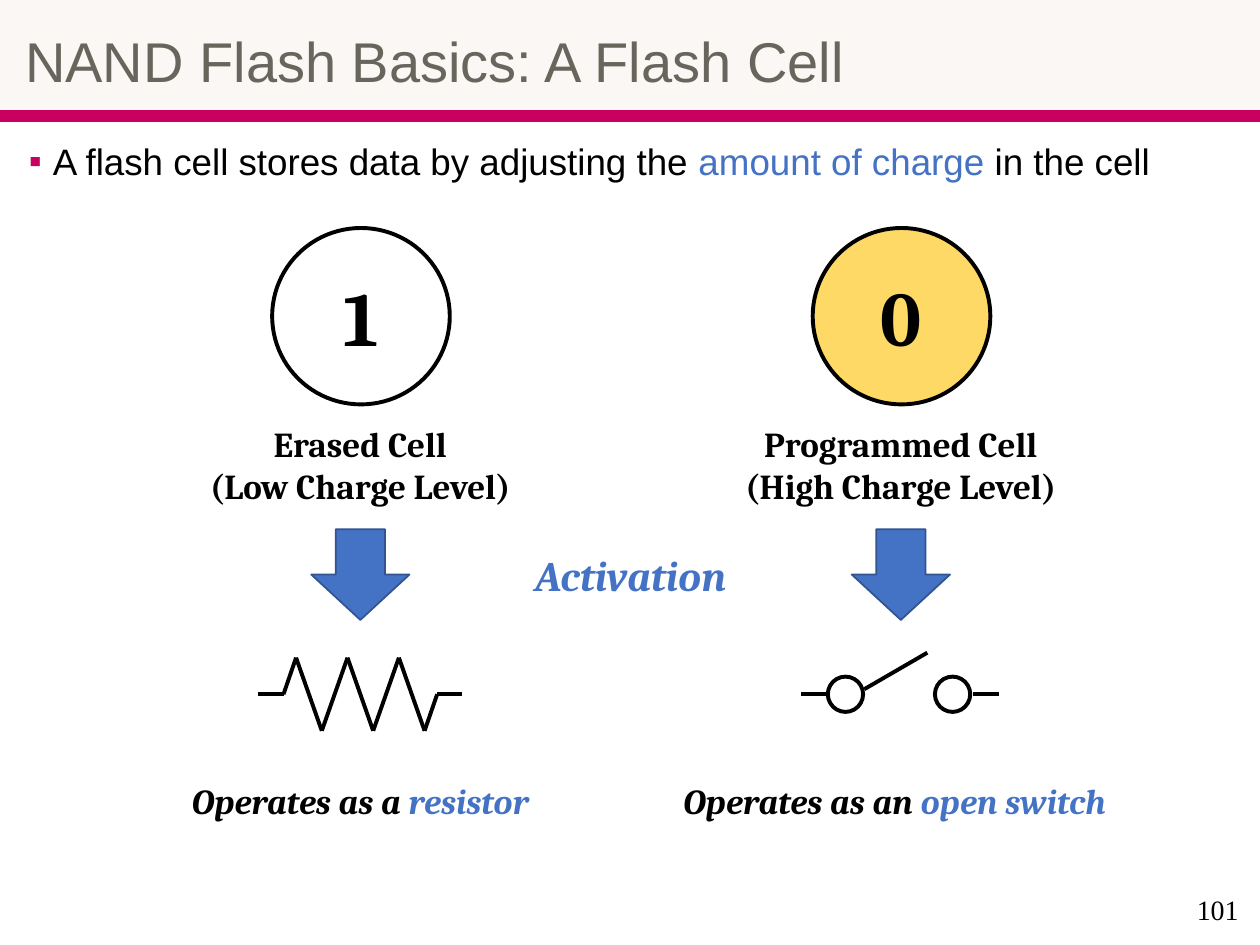
from dataclasses import dataclass
from itertools import pairwise
from lxml import etree
from pptx import Presentation
from pptx import util as u
from pptx.dml.color import RGBColor
from pptx.enum import shapes, text
from pptx.oxml import ns

HUES = {
    "ink": "000000", "paper": "FFFFFF", "blue": "4472C4", "edge": "325491",
    "gold": "FFD966", "pink": "C80060", "cream": "FAF7F5", "gray": "66665C",
}
KINDS = shapes.MSO_SHAPE
ALIGN = text.PP_ALIGN
MID = text.MSO_ANCHOR.MIDDLE
SERIF = {"name": "Cambria", "bold": True}
LABEL = SERIF | {"size": u.Pt(20)}
SLANT = LABEL | {"italic": True}
AXIS = 5.51


@dataclass
class Box:
    x: float
    y: float
    w: float
    h: float

    def place(self) -> tuple:
        return tuple(u.Inches(v) for v in (self.x, self.y, self.w, self.h))


@dataclass
class Cell:
    mid: float
    bit: str
    fill: str | None
    name: str
    level: str
    verb: str
    role: str
    wide: float


CELLS = [
    Cell(2.86, "1", None, "Erased Cell", "(Low Charge Level)",
         "Operates as a ", "resistor", 3.27),
    Cell(7.15, "0", "gold", "Programmed Cell", "(High Charge Level)",
         "Operates as an ", "open switch", 3.59),
]


def hue(key: str) -> RGBColor:
    return RGBColor.from_string(HUES[key])


def apply(item, vals: dict) -> None:
    for key, val in vals.items():
        setattr(item, key, val)


def write(frame, rows: list, font: dict, align=ALIGN.CENTER,
          pads=(0, 0, 0, 0), anchor=MID) -> None:
    sides = ("left", "top", "right", "bottom")
    apply(frame, {f"margin_{s}": u.Inches(p) for s, p in zip(sides, pads)})
    apply(frame, {"word_wrap": True, "vertical_anchor": anchor,
                  "auto_size": text.MSO_AUTO_SIZE.NONE})
    for i, row in enumerate(rows):
        para = frame.add_paragraph() if i else frame.paragraphs[0]
        para.alignment = align
        for words, tint in row:
            run = para.add_run()
            run.text = words
            apply(run.font, font)
            run.font.color.rgb = hue(tint)


def paint(item, fill: str | None, edge: str, width: float) -> None:
    if fill:
        item.fill.solid()
        item.fill.fore_color.rgb = hue(fill)
    else:
        item.fill.background()
    item.line.color.rgb = hue(edge)
    item.line.width = u.Pt(width)


def shape(slide, kind, box: Box, fill: str | None, edge="ink", width=2.25):
    item = slide.shapes.add_shape(kind, *box.place())
    item.shadow.inherit = False
    paint(item, fill, edge, width)
    return item


def label(slide, box: Box, rows: list, font: dict, **opts) -> None:
    item = slide.shapes.add_textbox(*box.place())
    write(item.text_frame, rows, font, **opts)


def wire(slide, start: tuple, end: tuple) -> None:
    ends = (u.Inches(v) for v in (*start, *end))
    item = slide.shapes.add_connector(shapes.MSO_CONNECTOR.STRAIGHT, *ends)
    item.line.color.rgb = hue("ink")
    item.line.width = u.Pt(2.25)
    etree.SubElement(item._element.spPr, ns.qn("a:effectLst"))


def holder(item, box: Box) -> None:
    apply(item, dict(zip(("left", "top", "width", "height"), box.place())))


def bullet(para, mark: str, tint: str, gap: float) -> None:
    props = para._p.get_or_add_pPr()
    props.set("marL", str(u.Inches(gap)))
    props.set("indent", str(-u.Inches(gap)))
    color = etree.SubElement(props, ns.qn("a:buClr"))
    etree.SubElement(color, ns.qn("a:srgbClr"), val=HUES[tint])
    etree.SubElement(props, ns.qn("a:buFont"), typeface="Arial")
    etree.SubElement(props, ns.qn("a:buChar"), char=mark)


def header(slide) -> None:
    shape(slide, KINDS.RECTANGLE, Box(0, 0.88, 10, 0.08), "pink", "pink", 1)
    title = slide.shapes.title
    holder(title, Box(0, 0, 10, 0.87))
    paint(title, "cream", "cream", 0.75)
    write(title.text_frame, [[("NAND Flash Basics: A Flash Cell", "gray")]],
          {"name": "Arial", "size": u.Pt(32)}, ALIGN.LEFT, (0.2, 0.2, 0.1, 0.05))
    title.text_frame.paragraphs[0].line_spacing = 0.9


def intro(slide) -> None:
    body = slide.placeholders[1]
    holder(body, Box(0.13, 1.09, 9.74, 5.99))
    para = body.text_frame.paragraphs[0]
    bullet(para, "▪", "pink", 0.19)
    row = [("A flash cell stores data by adjusting the ", "ink"),
           ("amount of charge ", "blue"), ("in the cell", "ink")]
    write(body.text_frame, [row], {"name": "Arial", "size": u.Pt(21)},
          ALIGN.LEFT, (0.1, 0.05, 0.1, 0.05), text.MSO_ANCHOR.TOP)
    apply(para, {"line_spacing": 0.9, "space_before": u.Pt(0)})


def column(slide, cell: Cell) -> None:
    left = cell.mid - 3.27 / 2
    disc = shape(slide, KINDS.OVAL, Box(cell.mid - 0.7, 1.81, 1.41, 1.4), cell.fill)
    write(disc.text_frame, [[(cell.bit, "ink")]], SERIF | {"size": u.Pt(44)})
    label(slide, Box(left, 3.35, 3.27, 0.67),
          [[(cell.name, "ink")], [(cell.level, "ink")]], LABEL)
    shape(slide, KINDS.DOWN_ARROW, Box(cell.mid - 0.39, 4.2, 0.78, 0.72),
          "blue", "edge", 1)
    label(slide, Box(cell.mid - 0.05 - cell.wide / 2 if cell.wide > 3.3 else left,
                     6.18, cell.wide, 0.34),
          [[(cell.verb, "ink"), (cell.role, "blue")]], SLANT)


def resistor(slide, mid: float) -> None:
    half, step = 0.61, 0.204
    peaks = [(mid + (i - 2.5) * step, AXIS + (0.29 if i % 2 else -0.29))
             for i in range(6)]
    path = [(mid - 0.81, AXIS), (mid - half, AXIS), *peaks,
            (mid + half, AXIS), (mid + 0.81, AXIS)]
    for start, end in pairwise(path):
        wire(slide, start, end)


def switch(slide, mid: float) -> None:
    for x in (mid - 0.58, mid + 0.27):
        shape(slide, KINDS.OVAL, Box(x, AXIS - 0.14, 0.28, 0.28), "paper")
    wire(slide, (mid - 0.29, 5.47), (mid + 0.21, 5.18))
    for x in (mid - 0.79, mid + 0.57):
        wire(slide, (x, AXIS), (x + 0.21, AXIS))


def main() -> None:
    deck = Presentation()
    apply(deck, {"slide_width": u.Inches(10), "slide_height": u.Inches(7.5)})
    slide = deck.slides.add_slide(deck.slide_layouts[1])
    header(slide)
    intro(slide)
    for cell in CELLS:
        column(slide, cell)
    resistor(slide, CELLS[0].mid)
    switch(slide, CELLS[1].mid)
    label(slide, Box(3.37, 4.36, 3.27, 0.4), [[("Activation", "blue")]],
          SLANT | {"size": u.Pt(24)})
    label(slide, Box(7.6, 6.97, 2.33, 0.5), [[("101", "ink")]],
          {"name": "Times New Roman", "size": u.Pt(16)},
          align=ALIGN.RIGHT, pads=(0.1, 0.05, 0.1, 0.05))
    deck.save("out.pptx")


if __name__ == "__main__":
    main()
